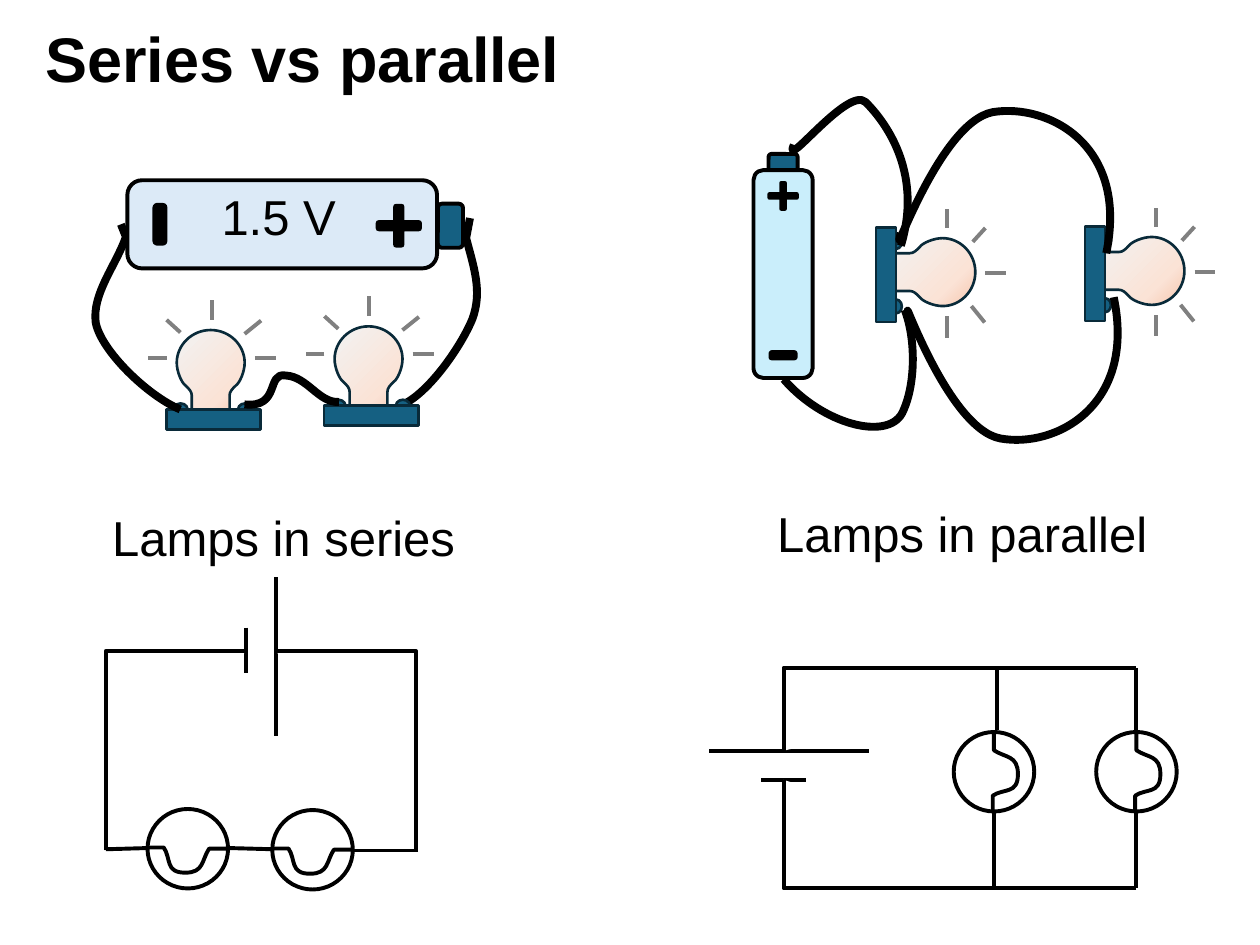
from lxml.etree import SubElement
from pptx import Presentation
from pptx.dml.color import RGBColor
from pptx.enum.shapes import MSO_CONNECTOR, MSO_SHAPE
from pptx.enum.text import MSO_ANCHOR
from pptx.oxml import parse_xml
from pptx.oxml.ns import nsdecls, qn
from pptx.util import Pt

COLORS = {
    "ink": "000000", "paper": "FFFFFF", "ray": "808080",
    "socket": "156082", "edge": "092A39",
    "series cell": "DCEAF7", "parallel cell": "CAEEFB",
}
GLOW = ((0, "F2F2F2"), (71, "FBE3D6"), (100, "F6C6AD"))

# Outlines: the first pair starts, other pairs are lines, six numbers a Bézier curve.
HALF_BULB = [(0, 0), (10.8, 0, 19.4, 8.6, 19.4, 18.7), (19.4, 23.8, 16.6, 30.2, 14.4, 31.7),
             (12.2, 33.8, 10.8, 35.3, 10.8, 37.4), (10.8, 51.1)]
QUARTER_PLUS = [(1.5, -12.5), (2.6, -12.5, 3.2, -11.9, 3.2, -10.8), (3.2, -3.2), (11.4, -3.2),
                (12.5, -3.2, 13.2, -2.6, 13.2, -1.5)]
FILAMENT = [(23, 0), (12.2, 0), (7.9, 6.5, 9.4, 13.7, -1.4, 13.7),
            (-13, 13.7, -9.4, 5.8, -13.7, -0.7), (-22.3, -0.7)]
RAYS = [(19.4, 2.2, 28.8, -5.4), (25.2, 16, 37.4, 16), (0.5, -5.8, 0.5, -17.3),
        (-17.3, 1.4, -25.2, -5.8), (-25.2, 16, -36, 16)]


def pairs(segment):
    return list(zip(segment[::2], segment[1::2]))


def stretch(outline, x_scale, y_scale):
    return [tuple(n for x, y in pairs(segment) for n in (x * x_scale, y * y_scale))
            for segment in outline]


def backward(outline):
    """Return the outline drawn from its end to its start."""
    points = [point for segment in outline for point in pairs(segment)][::-1]
    result, position = [points[0]], 1
    for segment in outline[:0:-1]:
        count = len(segment) // 2
        result.append(tuple(n for point in points[position:position + count] for n in point))
        position += count
    return result


def place(outline, origin, turn=0):
    """Move an outline to origin, turned by a quarter: 1 clockwise, -1 anticlockwise."""
    ox, oy = origin

    def move(u, v):
        return (ox - turn * v, oy + turn * u) if turn else (ox + u, oy + v)

    return [tuple(n for pair in pairs(segment) for n in move(*pair)) for segment in outline]


class CircuitSlide:
    font = {"name": "Arial", "size": Pt(28), "bold": False}

    def __init__(self, slide):
        self.slide = slide
        self.shapes = slide.shapes

    def start_group(self):
        self.shapes = self.slide.shapes.add_group_shape().shapes

    def color(self, target, name):
        target.rgb = RGBColor.from_string(COLORS[name])

    def stroke(self, shape, name, width):
        self.color(shape.line.color, name)
        shape.line.width = Pt(width)

    def paint(self, shape, fill, line, width):
        shape.shadow.inherit = False
        if fill:
            shape.fill.solid()
            self.color(shape.fill.fore_color, fill)
        else:
            shape.fill.background()
        if line:
            self.stroke(shape, line, width)
        else:
            shape.line.fill.background()

    def text(self, words, left, top, width, height, wrap=True, **changes):
        box = self.shapes.add_textbox(Pt(left), Pt(top), Pt(width), Pt(height))
        box.text_frame.word_wrap = wrap
        run = box.text_frame.paragraphs[0].add_run()
        run.text = words
        for name, value in {**self.font, **changes}.items():
            setattr(run.font, name, value)
        self.color(run.font.color, "ink")
        return box.text_frame

    def line(self, x1, y1, x2, y2, color="ink"):
        connector = self.shapes.add_connector(
            MSO_CONNECTOR.STRAIGHT, Pt(x1), Pt(y1), Pt(x2), Pt(y2))
        self.stroke(connector, color, 2.25)
        SubElement(connector._element.spPr, qn("a:effectLst"))

    def preset(self, kind, center, width, height, fill, line="ink", weight=2.25):
        x, y = center
        shape = self.shapes.add_shape(
            kind, Pt(x - width / 2), Pt(y - height / 2), Pt(width), Pt(height))
        self.paint(shape, fill, line, weight)
        return shape

    def freeform(self, outline, fill=None, line="ink", weight=2.25, close=False):
        start, *rest = [(Pt(x), Pt(y)) for segment in outline for x, y in pairs(segment)]
        builder = self.shapes.build_freeform(*start, scale=1.0)
        builder.add_line_segments(rest, close=close)
        shape = builder.convert_to_shape()
        self.bend(shape, outline)
        self.paint(shape, fill, line, weight)
        return shape

    def bend(self, shape, outline):
        """Join every three lines that stand for a curve into one Bézier curve."""
        lines = iter(list(shape._element.iter(qn("a:lnTo"))))
        for segment in outline[1:]:
            first, *others = [next(lines) for _ in pairs(segment)]
            for other in others:
                first.append(other[0])
                other.getparent().remove(other)
            if others:
                first.tag = qn("a:cubicBezTo")

    def cable(self, *outline):
        self.freeform(outline, weight=4.5)

    def glow(self, shape):
        """Give a shape without fill the radial gradient of a lit bulb."""
        stops = "".join(f'<a:gs pos="{pos * 1000}"><a:srgbClr val="{rgb}"/></a:gs>'
                        for pos, rgb in GLOW)
        gradient = parse_xml(
            f'<a:gradFill {nsdecls("a")} rotWithShape="1"><a:gsLst>{stops}</a:gsLst>'
            '<a:path path="circle"><a:fillToRect r="100000" b="100000"/></a:path></a:gradFill>')
        properties = shape._element.spPr
        properties.replace(properties.find(qn("a:noFill")), gradient)

    def bulb(self, origin, turn=0):
        """Draw a lit bulb in its socket; origin is the tip of the glass."""
        glass = HALF_BULB + backward(stretch(HALF_BULB, -1, 1))
        self.glow(self.freeform(place(glass, origin, turn), None, "edge", 1.5, close=True))
        for ray in place(RAYS, origin, turn):
            self.line(*ray, "ray")
        for kind, offset, size in ((MSO_SHAPE.OVAL, (-17.2, 45.2), (7.9, 6.5)),
                                   (MSO_SHAPE.OVAL, (19.6, 45.2), (7.9, 6.5)),
                                   (MSO_SHAPE.RECTANGLE, (1.6, 51), (54, 11.5))):
            width, height = reversed(size) if turn else size
            center = place([offset], origin, turn)[0]
            self.preset(kind, center, width, height, "socket", "edge", 1.5)

    def plus(self, center, scale=1):
        quarter = stretch(QUARTER_PLUS, scale, scale)
        right = quarter + backward(stretch(quarter, 1, -1))
        whole = right + stretch(right, -1, -1)
        self.freeform(place(whole, center), "ink", None, close=True)

    def minus(self, center, width, height):
        bar = self.preset(MSO_SHAPE.ROUNDED_RECTANGLE, center, width, height, "ink", None)
        bar.adjustments[0] = 0.32

    def cell(self, cap, cap_size, body, body_size, fill):
        self.preset(MSO_SHAPE.ROUNDED_RECTANGLE, cap, *cap_size, "socket")
        self.preset(MSO_SHAPE.ROUNDED_RECTANGLE, body, *body_size, fill)

    def lamp_symbol(self, center, turn=0):
        self.preset(MSO_SHAPE.OVAL, center, 46, 45.4, "paper")
        self.freeform(place(FILAMENT, center, turn))


def draw_series_symbols(page):
    page.start_group()
    page.line(157.7, 329.8, 157.7, 420.5)
    page.line(140.4, 358.6, 140.4, 384.5)
    for side, plate in ((60.5, 140.4), (237.6, 157.7)):
        page.freeform([(side, 486), (side, 372), (plate, 372)], "paper")
    page.line(239, 486, 201.6, 486)
    page.lamp_symbol((107.3, 485))
    page.lamp_symbol((178.6, 485.6))
    page.line(156.2, 485.3, 130.3, 484.6)
    page.line(85, 484.6, 60.5, 485.3)


def draw_parallel_symbols(page):
    top, bottom, left, middle, right = 381.6, 507.6, 447.8, 568, 649.4
    page.start_group()
    page.line(405.4, 429, 496.8, 429)
    page.line(434.9, 445.7, 460.8, 445.7)
    for rail, plate in ((bottom, 445.7), (top, 429)):
        page.freeform([(right, rail), (left, rail), (left, plate)], "paper")
    page.line(right, top, right, 418.3)
    for x in (right, middle):
        page.lamp_symbol((x, 441), -1)
        page.line(x, 463.7, x, bottom)
    page.line(569.5, top, 569.5, 417)


def draw_series_wiring(page):
    page.start_group()
    page.bulb((120.4, 188.6))
    page.cable((69.1, 128.2), (72, 135.4), (66.2, 151.9, 52.6, 167.8, 54.7, 184.3),
               (57.6, 200.2, 84.2, 226.1, 103, 234))
    page.cable((268.6, 124.6), (266.4, 136.1), (270.7, 152.6, 275.8, 166.3, 270, 182.2),
               (263.5, 198, 245.5, 223.9, 230.4, 231.1))
    page.bulb((210.6, 186.5))
    page.cable((139.7, 231.1), (160.6, 233.3, 151.9, 212.4, 163.4, 214.6),
               (175.7, 215.3, 182.2, 230.4, 193.7, 229.7))
    page.cell((257.4, 129), (14.4, 25.2), (161.3, 128.2), (177, 50.4), "series cell")
    page.plus((227.9, 129))
    page.minus((91.4, 128.2), 8.6, 24.5)
    page.text("1.5 V", 119.5, 103, 80.6, 41)


def draw_parallel_wiring(page):
    axis = 447.5
    page.start_group()
    page.bulb((557.3, 155.5), 1)
    page.cable((453.6, 82.8), (447.1, 98.6, 484.6, 49, 494.6, 58.3),
               (504.7, 68.4, 527.8, 97.2, 514.8, 140.4))
    page.cable((517, 177.1), (523.4, 193.7, 523.4, 220.3, 515.5, 236.2),
               (506.9, 252, 470.2, 242.6, 447.8, 216.7))
    page.cell((axis, 93), (16.6, 10), (axis, 156.6), (33.8, 118.8), "parallel cell")
    page.plus((axis, 112), 0.68)
    page.minus((axis, 203), 16.6, 5.8)
    page.bulb((676.8, 154.8), 1)
    page.cable((514.8, 133.2), (508.3, 156.2, 536.4, 69.8, 567.4, 64.1),
               (599, 59, 645.1, 82.8, 632.2, 144.7))
    page.cable((519.8, 181.4), (512.6, 158.4, 540.7, 244.8, 571.7, 250.6),
               (603.4, 256.3, 649.4, 231.8, 636.5, 169.9))


def main():
    deck = Presentation()
    deck.slide_width, deck.slide_height = Pt(720), Pt(540)
    page = CircuitSlide(deck.slides.add_slide(deck.slide_layouts[6]))
    title = page.text("Series vs parallel", 18.7, 12.2, 687, 46.8, size=Pt(36), bold=True)
    title.vertical_anchor = MSO_ANCHOR.MIDDLE
    title.paragraphs[0].line_spacing = 0.9
    page.text("Lamps in series", 57, 286.6, 217.4, 41, wrap=False)
    page.text("Lamps in parallel", 437, 284.4, 229, 41, wrap=False)
    for draw in (draw_series_symbols, draw_parallel_symbols,
                 draw_series_wiring, draw_parallel_wiring):
        draw(page)
    deck.save("out.pptx")


if __name__ == "__main__":
    main()
